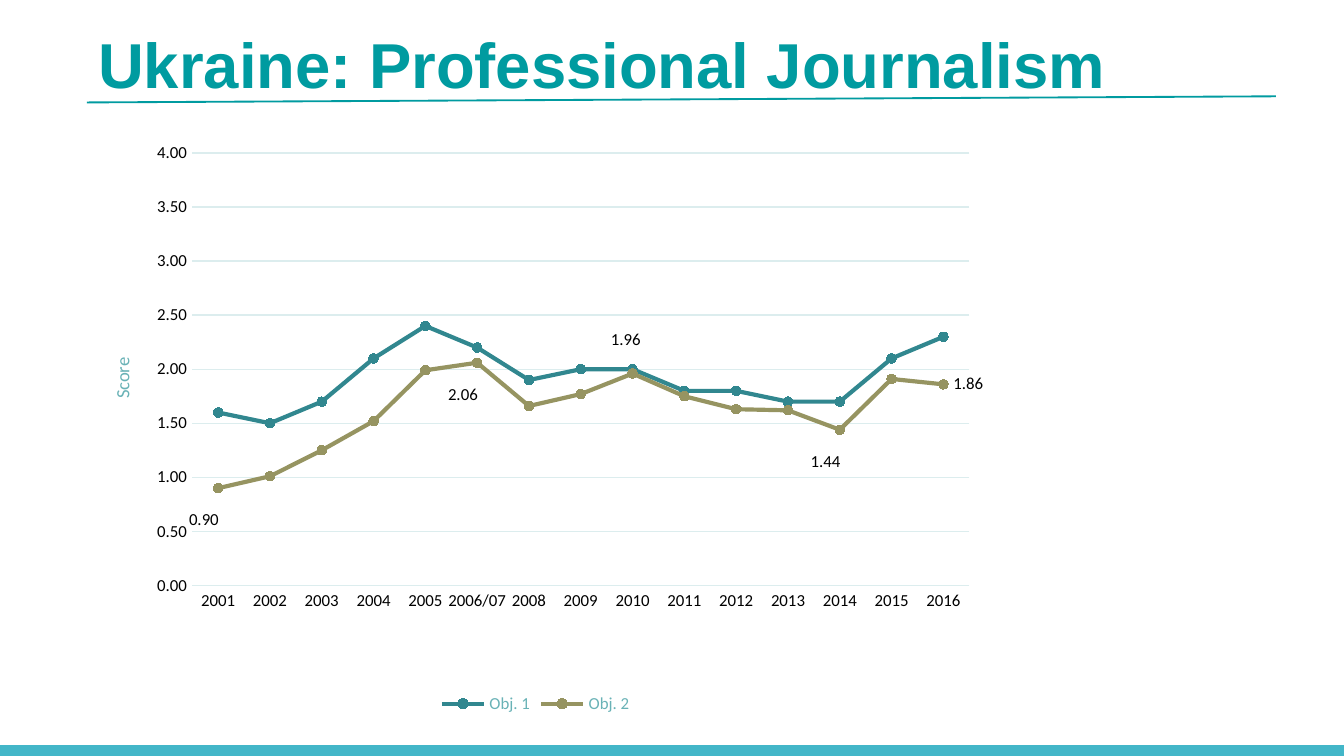
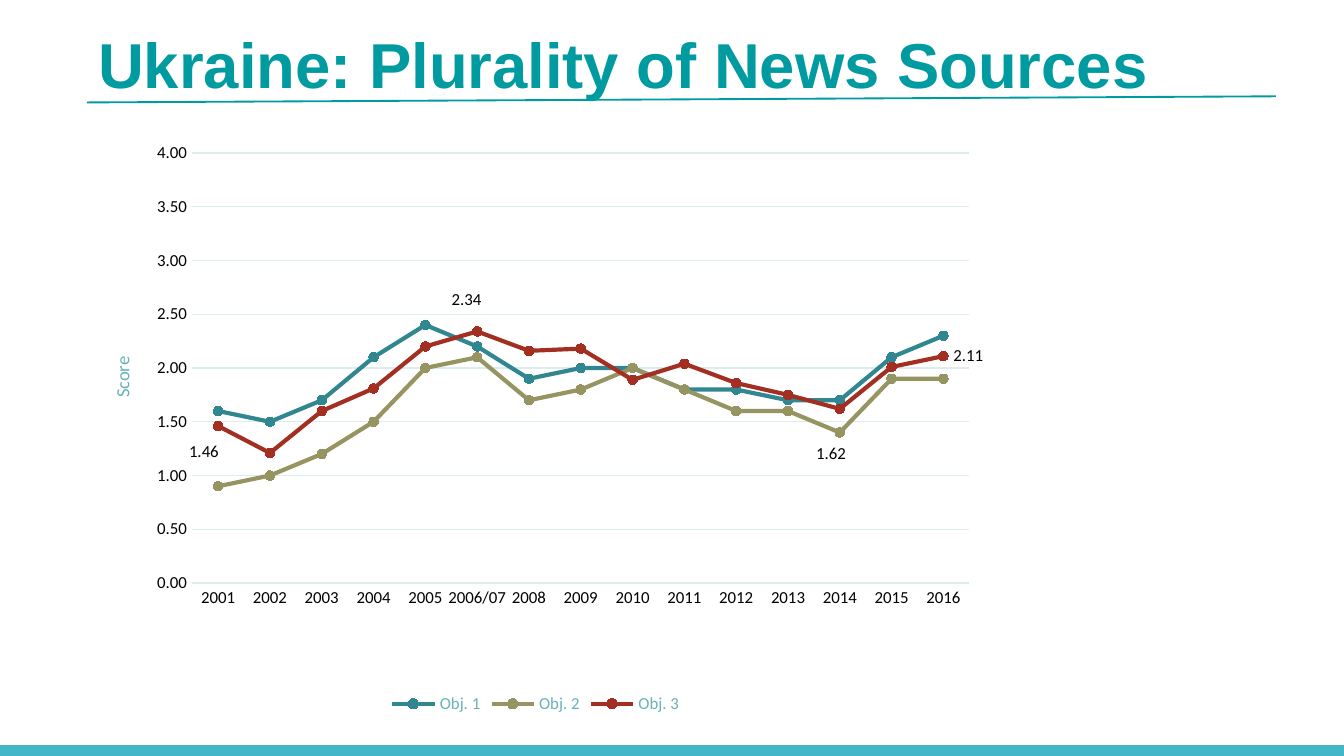
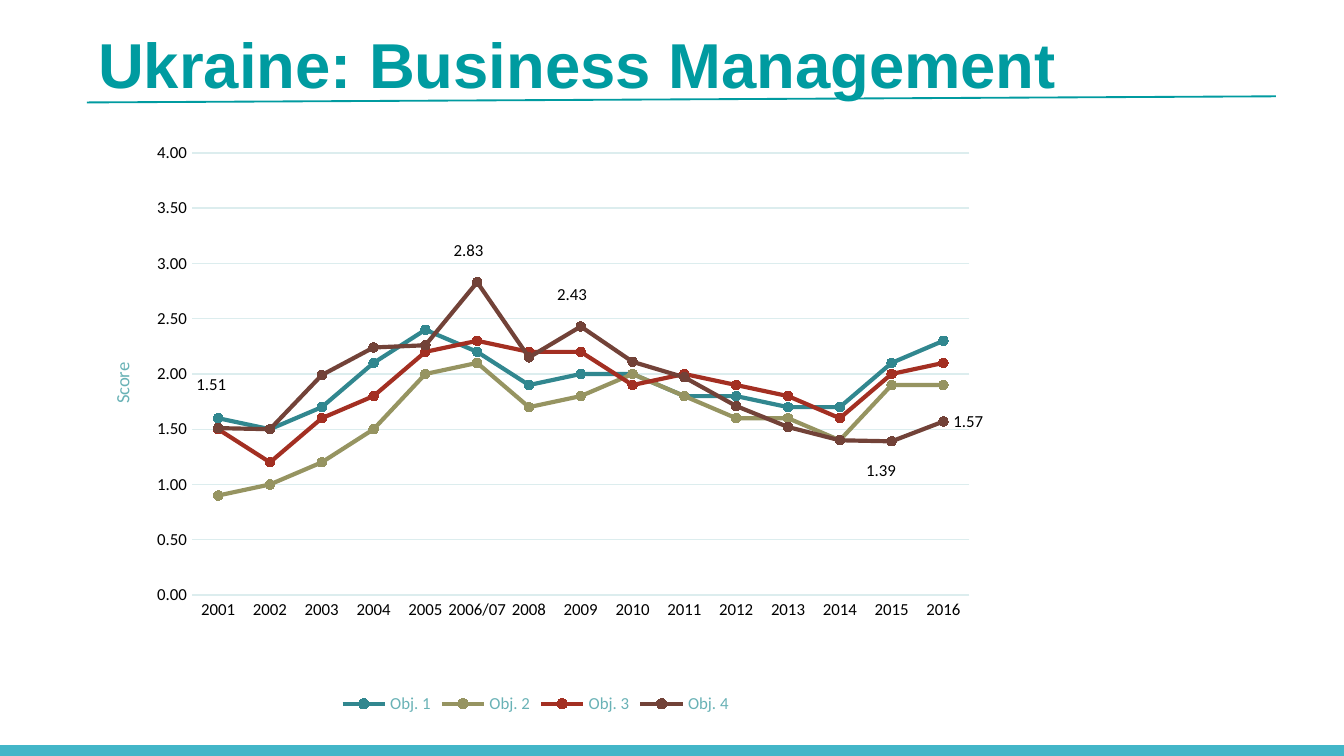
from copy import deepcopy

from lxml.etree import SubElement
from pptx import Presentation
from pptx.chart.data import CategoryChartData
from pptx.dml.color import RGBColor
from pptx.enum.chart import (XL_CHART_TYPE, XL_LABEL_POSITION, XL_LEGEND_POSITION,
                             XL_MARKER_STYLE, XL_TICK_MARK)
from pptx.enum.shapes import MSO_CONNECTOR, MSO_SHAPE
from pptx.enum.text import MSO_ANCHOR, MSO_AUTO_SIZE, PP_ALIGN
from pptx.oxml import parse_xml
from pptx.oxml.ns import nsdecls, qn
from pptx.util import Pt

TEAL = RGBColor(0x00, 0x9B, 0xA0)
BAND = RGBColor(0x43, 0xB6, 0xC8)
GRID = RGBColor(0xDC, 0xED, 0xEE)
SOFT_TEAL = RGBColor(0x69, 0xB2, 0xB6)
CHART_TEXT = RGBColor(0x37, 0x6D, 0x70)
BLACK = RGBColor(0x00, 0x00, 0x00)

SLIDE_SIZE = (720, 405)
BAND_BOX = (0, 399.2, 720, 6.5)
TITLE_BOX = (45.4, 0, 635.8, 67.7)
RULE_ENDS = (46.6, 54.9, 683.5, 51.6)
CHART_BOX = (41.8, 67.7, 490.3, 317.5)
PLOT_LEFT, PLOT_TOP, PLOT_WIDTH = 61.2, 14.3, 416.3

TITLE_FONT = {"name": "Arial", "size": Pt(34), "bold": True}
CHART_FONT = {"name": "Calibri", "size": Pt(10)}
SMALL_FONT = {"name": "Calibri", "size": Pt(9)}

YEARS = ["2001", "2002", "2003", "2004", "2005", "2006/07", "2008", "2009",
         "2010", "2011", "2012", "2013", "2014", "2015", "2016"]
OBJECTIVES = [
    ("Obj. 1", RGBColor(0x31, 0x87, 0x8F),
     [1.6, 1.5, 1.7, 2.1, 2.4, 2.2, 1.9, 2, 2, 1.8, 1.8, 1.7, 1.7, 2.1, 2.3]),
    ("Obj. 2", RGBColor(0x96, 0x94, 0x61),
     [0.9, 1.01, 1.25, 1.52, 1.99, 2.06, 1.66, 1.77, 1.96, 1.75, 1.63, 1.62, 1.44, 1.91, 1.86]),
    ("Obj. 3", RGBColor(0xA3, 0x2F, 0x22),
     [1.46, 1.21, 1.6, 1.81, 2.2, 2.34, 2.16, 2.18, 1.89, 2.04, 1.86, 1.75, 1.62, 2.01, 2.11]),
    ("Obj. 4", RGBColor(0x72, 0x42, 0x38),
     [1.51, 1.5, 1.99, 2.24, 2.26, 2.83, 2.15, 2.43, 2.11, 1.97, 1.71, 1.52, 1.4, 1.39, 1.57]),
]
SLIDES = [
    ("Ukraine: Professional Journalism", 2, 231.8,
     {"2001": (-21, 17), "2006/07": (-21, 17), "2010": (-17, -18), "2014": (-21, 17)}),
    ("Ukraine: Plurality of News Sources", 3, 230.5,
     {"2001": (-21, 14), "2006/07": (-19, -17), "2014": (-18, 24)}),
    ("Ukraine: Business Management", 4, 236.9,
     {"2001": (-17, -23), "2006/07": (-18, -17), "2009": (-18, -17), "2015": (-19, 16)}),
]


def set_font(font, formats, color):
    """Apply a dict of font values and a colour."""
    for attribute, value in formats.items():
        setattr(font, attribute, value)
    font.color.rgb = color


def set_line(line, color, width):
    """Give a line its colour and width in points."""
    line.color.rgb = color
    line.width = Pt(width)


def manual_layout(chart_size, left, top, size=None, edge=True):
    """Return a layout element for a place in points within the chart."""
    layout = parse_xml(f"<c:layout {nsdecls('c')}><c:manualLayout/></c:layout>")
    values = {"layoutTarget": "inner"} if size else {}
    if edge:
        values.update(xMode="edge", yMode="edge")
    values.update(x=left / chart_size[0], y=top / chart_size[1])
    if size:
        values.update(w=size[0] / chart_size[0], h=size[1] / chart_size[1])
    for tag, value in values.items():
        SubElement(layout[0], qn(f"c:{tag}")).set("val", str(value))
    return layout


def drop_children(parent, tag):
    """Remove the children of a chart part that have the given tag."""
    for child in parent.findall(qn(tag)):
        parent.remove(child)


def add_frame(slide):
    """Draw the bottom band and the rule under the title."""
    band = slide.shapes.add_shape(MSO_SHAPE.RECTANGLE, *map(Pt, BAND_BOX))
    band.shadow.inherit = False
    band.fill.solid()
    band.fill.fore_color.rgb = BAND
    band.line.fill.background()
    rule = slide.shapes.add_connector(MSO_CONNECTOR.STRAIGHT, *map(Pt, RULE_ENDS))
    set_line(rule.line, TEAL, 1)
    SubElement(rule._element.spPr, qn("a:effectLst"))


def set_title(slide, wording, box):
    """Place and format the title placeholder."""
    title = slide.shapes.title
    title.left, title.top, title.width, title.height = map(Pt, box)
    frame = title.text_frame
    frame.text = wording
    for attribute, value in {"word_wrap": True, "auto_size": MSO_AUTO_SIZE.NONE,
                             "vertical_anchor": MSO_ANCHOR.MIDDLE}.items():
        setattr(frame, attribute, value)
    frame.paragraphs[0].alignment = PP_ALIGN.LEFT
    set_font(frame.paragraphs[0].runs[0].font, TITLE_FONT, TEAL)


def format_axes(chart, chart_size, plot_height):
    """Format both axes, the gridlines and the score caption."""
    years, scores = chart.category_axis, chart.value_axis
    for axis in (years, scores):
        axis.major_tick_mark = axis.minor_tick_mark = XL_TICK_MARK.NONE
        set_font(axis.tick_labels.font, SMALL_FONT, BLACK)
    set_line(years.format.line, GRID, 0.75)
    scores.format.line.fill.background()
    for attribute, value in {"minimum_scale": 0, "maximum_scale": 4, "major_unit": 0.5,
                             "has_major_gridlines": True}.items():
        setattr(scores, attribute, value)
    set_line(scores.major_gridlines.format.line, GRID, 0.75)
    scores.tick_labels.number_format = "0.00"
    scores.tick_labels.number_format_is_linked = False
    caption = scores.axis_title
    caption.text_frame.text = "Score"
    set_font(caption.text_frame.paragraphs[0].runs[0].font,
             {**CHART_FONT, "bold": False}, SOFT_TEAL)
    caption.text_frame._txBody.bodyPr.set("rot", "-5400000")
    drop_children(caption._element, "c:layout")
    caption._element.find(qn("c:tx")).addnext(
        manual_layout(chart_size, 15.5, PLOT_TOP + plot_height / 2 - 8))


def label_points(series, offsets, chart_size):
    """Show the last value and the values of chosen years, moved by their offsets."""
    labels = series.data_labels
    for attribute, value in {"show_value": True, "number_format": "0.00",
                             "number_format_is_linked": False,
                             "position": XL_LABEL_POSITION.RIGHT}.items():
        setattr(labels, attribute, value)
    set_font(labels.font, SMALL_FONT, BLACK)
    shared = labels._element
    drop_children(shared, "c:showLeaderLines")
    formats = [deepcopy(part) for part in shared]
    SubElement(shared, qn("c:showLeaderLines")).set("val", "0")
    for index, year in enumerate(YEARS[:-1]):
        label = parse_xml(f'<c:dLbl {nsdecls("c")}><c:idx val="{index}"/></c:dLbl>')
        if year in offsets:
            label.append(manual_layout(chart_size, *offsets[year], edge=False))
            label.extend(deepcopy(part) for part in formats)
        else:
            SubElement(label, qn("c:delete")).set("val", "1")
        shared.insert(index, label)


def add_score_chart(slide, box, objective_count, plot_height, offsets):
    """Draw the score lines, with two decimals and labels on the newest objective only."""
    objectives = OBJECTIVES[:objective_count]
    newest = objectives[-1][0]
    scores = CategoryChartData(number_format="0.00")
    scores.categories = YEARS
    for name, _, values in objectives:
        digits = 2 if name == newest else 1
        scores.add_series(name, [round(value, digits) for value in values])
    chart = slide.shapes.add_chart(XL_CHART_TYPE.LINE_MARKERS, *map(Pt, box), scores).chart
    chart_size = box[2:]
    chart.has_title = False
    set_font(chart.font, CHART_FONT, CHART_TEXT)
    format_axes(chart, chart_size, plot_height)
    chart.has_legend = True
    chart.legend.position = XL_LEGEND_POSITION.BOTTOM
    chart.legend.include_in_layout = False
    set_font(chart.legend.font, SMALL_FONT, SOFT_TEAL)
    plot = chart.plots[0]
    plot.vary_by_categories = False
    for series, (_, color, _) in zip(plot.series, objectives):
        series.smooth = False
        set_line(series.format.line, color, 2.25)
        marker = series.marker
        marker.style, marker.size = XL_MARKER_STYLE.CIRCLE, 5
        marker.format.fill.solid()
        marker.format.fill.fore_color.rgb = color
        marker.format.line.color.rgb = color
    label_points(plot.series[objective_count - 1], offsets, chart_size)
    plot_area = chart._chartSpace.chart.plotArea
    drop_children(plot_area, "c:layout")
    plot_area.insert(0, manual_layout(chart_size, PLOT_LEFT, PLOT_TOP,
                                      (PLOT_WIDTH, plot_height)))


def main():
    """Build the three slides and save them."""
    presentation = Presentation()
    presentation.slide_width, presentation.slide_height = map(Pt, SLIDE_SIZE)
    for wording, objective_count, plot_height, offsets in SLIDES:
        slide = presentation.slides.add_slide(presentation.slide_layouts[5])
        add_frame(slide)
        set_title(slide, wording, TITLE_BOX)
        add_score_chart(slide, CHART_BOX, objective_count, plot_height, offsets)
    presentation.save("out.pptx")


if __name__ == "__main__":
    main()
